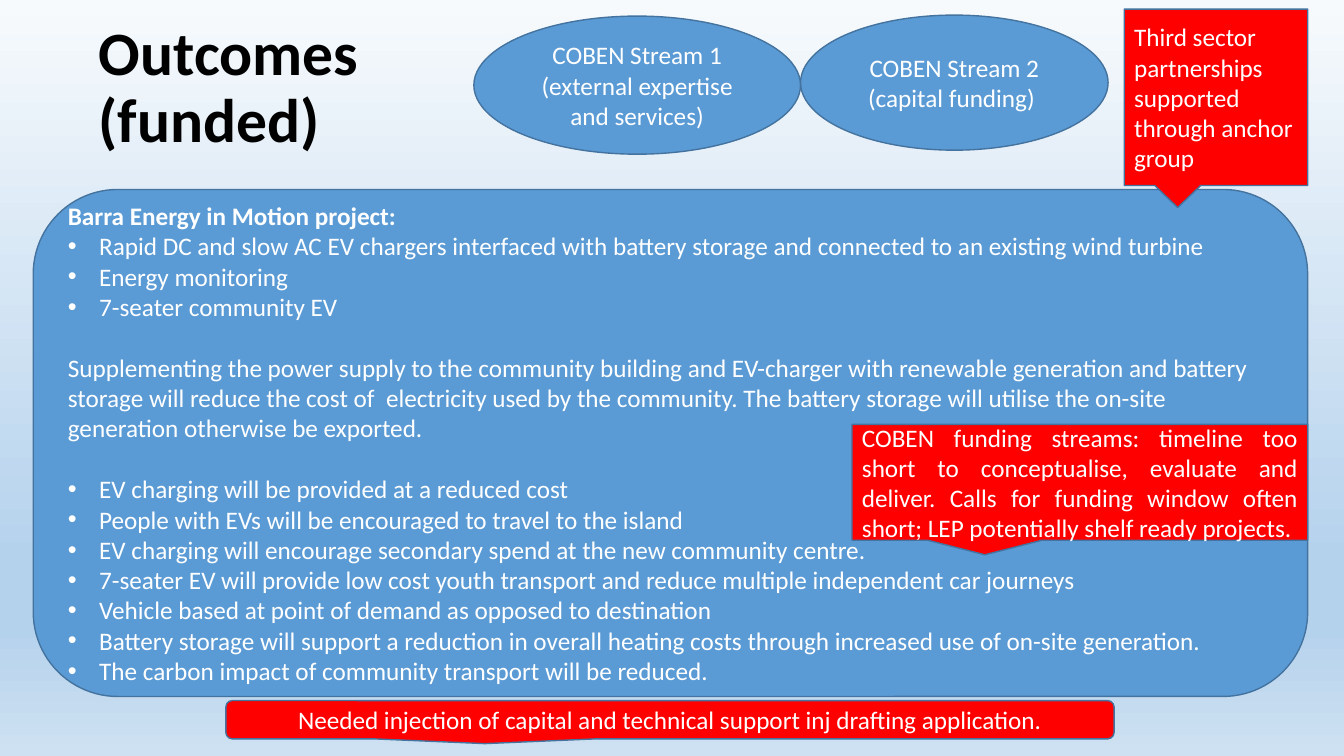
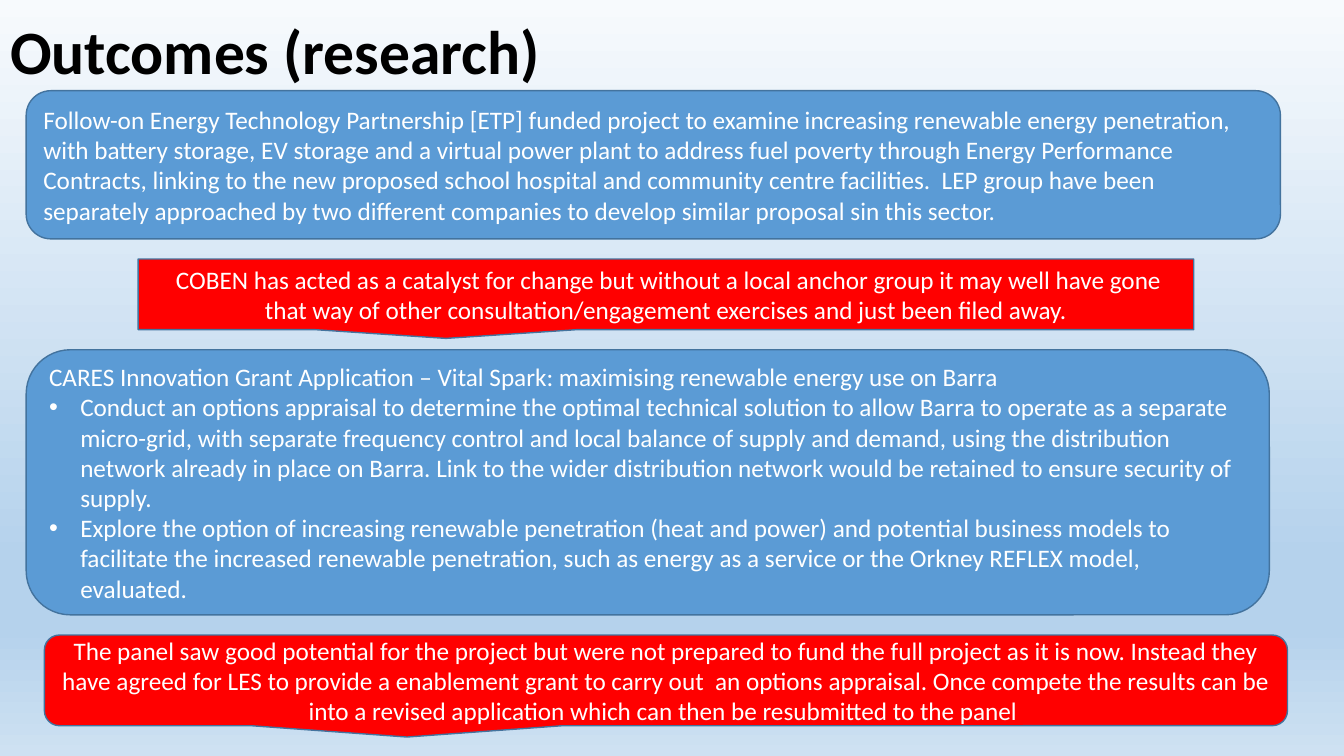
from lxml import etree
from pptx import Presentation
from pptx import util as u
from pptx.dml.color import RGBColor
from pptx.enum import shapes, text
from pptx.oxml.ns import qn

BLUE = RGBColor(0x5B, 0x9B, 0xD5)
OUTLINE = RGBColor(0x43, 0x73, 0x9E)
RED = RGBColor(0xFF, 0x00, 0x00)
WHITE = RGBColor(0xFF, 0xFF, 0xFF)
BLACK = RGBColor(0x00, 0x00, 0x00)
BACKGROUND = [
    (0, RGBColor(0xF7, 0xFA, 0xFD)),
    (74, RGBColor(0xB5, 0xD2, 0xEC)),
    (83, RGBColor(0xB5, 0xD2, 0xEC)),
    (100, RGBColor(0xCE, 0xE1, 0xF2)),
]
FONT = "Calibri"
LINE_GAP = u.Pt(22)

LEFT = text.PP_ALIGN.LEFT
CENTER = text.PP_ALIGN.CENTER
JUSTIFY = text.PP_ALIGN.JUSTIFY
SHAPE = shapes.MSO_SHAPE


def add_bullet(paragraph):
    properties = paragraph._p.get_or_add_pPr()
    properties.set("marL", str(u.Inches(0.31)))
    properties.set("indent", str(-u.Inches(0.31)))
    etree.SubElement(properties, qn("a:buFont"), typeface="Arial")
    etree.SubElement(properties, qn("a:buChar"), char="•")


def write(paragraph, words, size=18, color=WHITE, bold=False, align=LEFT,
          bullet=False, before=None):
    if bullet:
        add_bullet(paragraph)
    paragraph.alignment = align
    if before is not None:
        paragraph.space_before = before
    run = paragraph.add_run()
    run.text = words
    run.font.name = FONT
    run.font.size = u.Pt(size)
    run.font.bold = bold
    run.font.color.rgb = color


def bullets(*items, **first_format):
    """Bulleted paragraphs; the extra format goes to the first one only."""
    return [(item, dict(bullet=True, **(first_format if index == 0 else {})))
            for index, item in enumerate(items)]


class Deck:
    def __init__(self):
        self.presentation = Presentation()
        self.presentation.slide_width = u.Inches(13.33)
        self.presentation.slide_height = u.Inches(7.5)
        self.slide = None
        self.paint_background()

    def paint_background(self):
        master = self.presentation.slide_master
        fill = master.background.fill
        fill.gradient()
        fill.gradient_angle = 270
        stops = next(master.element.iter(qn("a:gsLst")))
        for stop in list(stops):
            stops.remove(stop)
        for position, color in BACKGROUND:
            stop = etree.SubElement(stops, qn("a:gs"), pos=str(position * 1000))
            etree.SubElement(stop, qn("a:srgbClr"), val=str(color))

    def add_slide(self, title, *box):
        layout = self.presentation.slide_layouts[5]
        self.slide = self.presentation.slides.add_slide(layout)
        holder = self.slide.shapes.title
        holder.left, holder.top, holder.width, holder.height = map(u.Inches, box)
        frame = holder.text_frame
        frame.word_wrap = True
        frame.auto_size = text.MSO_AUTO_SIZE.NONE
        frame.vertical_anchor = text.MSO_ANCHOR.MIDDLE
        write(frame.paragraphs[0], title, size=44, color=BLACK, bold=True)
        frame.paragraphs[0].line_spacing = 0.9

    def add_box(self, kind, fill, box, paragraphs):
        shape = self.slide.shapes.add_shape(kind, *map(u.Inches, box))
        shape.shadow.inherit = False
        shape.fill.solid()
        shape.fill.fore_color.rgb = fill
        shape.line.color.rgb = OUTLINE
        shape.line.width = u.Pt(1)
        frame = shape.text_frame
        frame.word_wrap = True
        frame.vertical_anchor = text.MSO_ANCHOR.MIDDLE
        for index, (words, style) in enumerate(paragraphs):
            paragraph = frame.add_paragraph() if index else frame.paragraphs[0]
            write(paragraph, words, **style)

    def panel(self, box, paragraphs):
        self.add_box(SHAPE.ROUNDED_RECTANGLE, BLUE, box, paragraphs)

    def stream(self, box, words):
        self.add_box(SHAPE.OVAL, BLUE, box, [(words, dict(align=CENTER))])

    def callout(self, box, words, align=CENTER, rounded=False):
        kind = (SHAPE.ROUNDED_RECTANGULAR_CALLOUT if rounded
                else SHAPE.RECTANGULAR_CALLOUT)
        self.add_box(kind, RED, box, [(words, dict(align=align))])


def funded_outcomes(deck):
    deck.add_slide("Outcomes (funded)", 0.88, 0.16, 2.98, 1.45)

    # Project panel
    deck.panel((0.33, 1.88, 12.64, 5.03), [
        ("Barra Energy in Motion project:", dict(bold=True)),
        *bullets(
            "Rapid DC and slow AC EV chargers interfaced with battery storage and connected to an existing wind turbine",
            "Energy monitoring",
            "7-seater community EV"),
        ("Supplementing the power supply to the community building and EV-charger with renewable generation and "
         "battery storage will reduce the cost of  electricity used by the community. The battery storage will "
         "utilise the on-site generation otherwise be exported.", dict(before=LINE_GAP)),
        *bullets(
            "EV charging will be provided at a reduced cost",
            "People with EVs will be encouraged to travel to the island",
            "EV charging will encourage secondary spend at the new community centre.",
            "7-seater EV will provide low cost youth transport and reduce multiple independent car journeys",
            "Vehicle based at point of demand as opposed to destination",
            "Battery storage will support a reduction in overall heating costs through increased use of on-site generation.",
            "The carbon impact of community transport will be reduced.",
            before=LINE_GAP),
    ])

    # Funding streams
    deck.stream((4.7, 0.16, 3.24, 1.37), "COBEN Stream 1 (external expertise and services)")
    deck.stream((7.94, 0.15, 3.05, 1.34), "COBEN Stream 2 (capital funding) ")

    # Lessons
    deck.callout((8.45, 4.21, 4.52, 1.15),
                 "COBEN funding streams: timeline too short to conceptualise, evaluate and deliver. "
                 "Calls for funding window often short; LEP potentially shelf ready projects.", align=JUSTIFY)
    deck.callout((11.15, 0.09, 1.82, 1.75),
                 "Third sector partnerships supported through anchor group", align=LEFT)
    deck.callout((2.24, 6.95, 8.81, 0.38),
                 "Needed injection of capital and technical support inj drafting application.", rounded=True)


def research_outcomes(deck):
    deck.add_slide("Outcomes (research)", 0, 0, 11.73, 1.08)

    # Research projects
    deck.panel((0.26, 0.9, 12.44, 1.47), [
        ("Follow-on Energy Technology Partnership [ETP] funded project to examine increasing renewable energy "
         "penetration, with battery storage, EV storage and a virtual power plant to address fuel poverty through "
         "Energy Performance Contracts, linking to the new proposed school hospital and community centre "
         "facilities.  LEP group have been separately approached by two different companies to develop similar "
         "proposal sin this sector.", {}),
    ])
    deck.panel((0.26, 3.47, 12.33, 2.63), [
        ("CARES Innovation Grant Application – Vital Spark: maximising renewable energy use on Barra", {}),
        *bullets(
            "Conduct an options appraisal to determine the optimal technical solution to allow Barra to operate as a "
            "separate micro-grid, with separate frequency control and local balance of supply and demand, using the "
            "distribution network already in place on Barra. Link to the wider distribution network would be "
            "retained to ensure security of supply.",
            "Explore the option of increasing renewable penetration (heat and power) and potential business models "
            "to facilitate the increased renewable penetration, such as energy as a service or the Orkney REFLEX "
            "model, evaluated."),
    ])

    # Lessons
    deck.callout((1.37, 2.57, 10.47, 0.7),
                 " COBEN has acted as a catalyst for change but without a local anchor group it may well have gone "
                 "that way of other consultation/engagement exercises and just been filed away.")
    deck.callout((0.44, 6.3, 12.33, 0.9),
                 "The panel saw good potential for the project but were not prepared to fund the full project as it "
                 "is now. Instead they have agreed for LES to provide a enablement grant to carry out  an options "
                 "appraisal. Once compete the results can be into a revised application which can then be "
                 "resubmitted to the panel ", rounded=True)


def main():
    deck = Deck()
    funded_outcomes(deck)
    research_outcomes(deck)
    deck.presentation.save("out.pptx")


if __name__ == "__main__":
    main()
